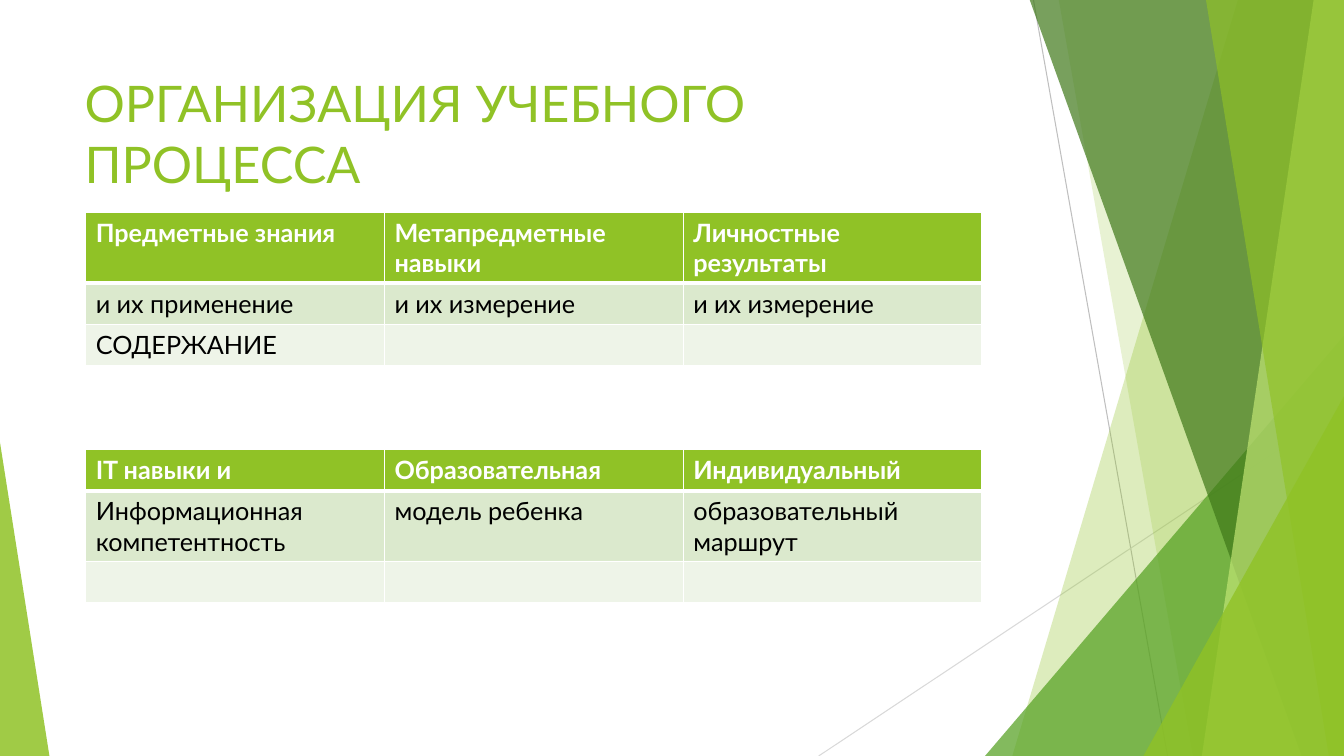
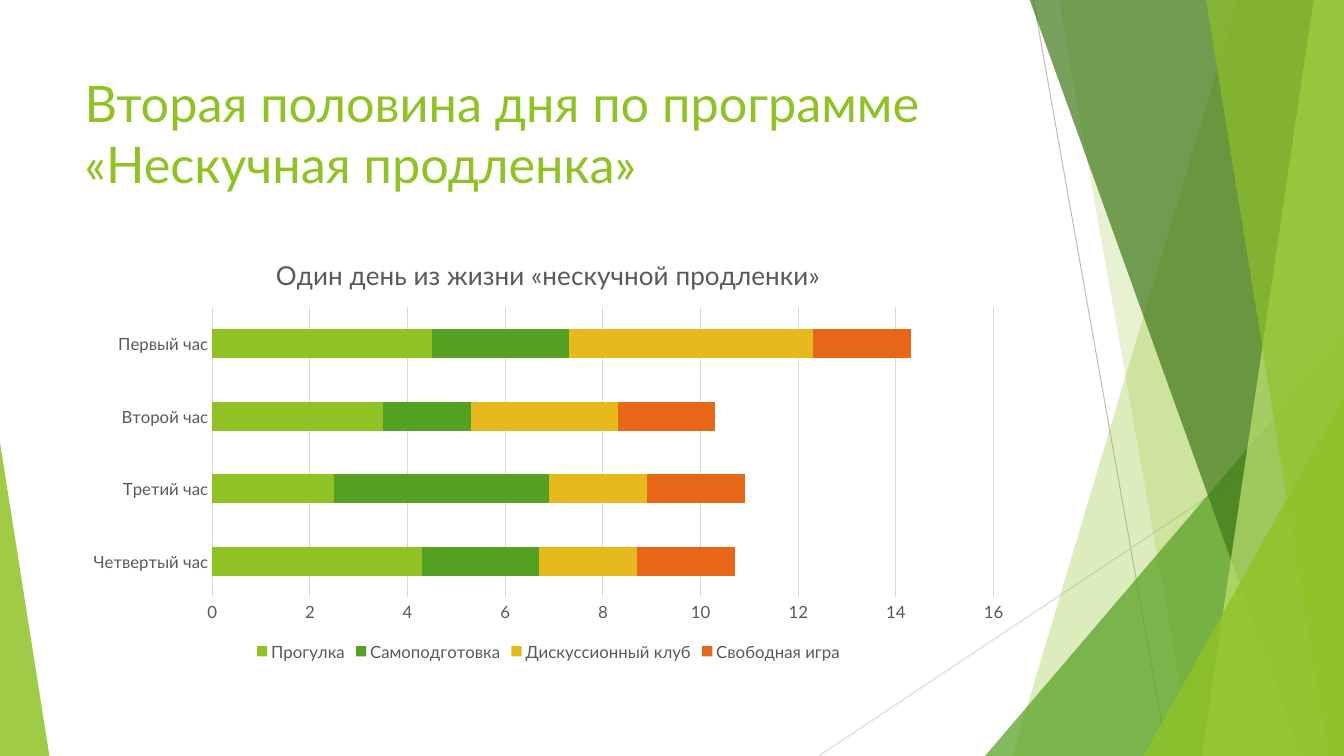
from lxml import etree
from pptx import Presentation
from pptx.chart.data import CategoryChartData
from pptx.dml.color import RGBColor
from pptx.enum.chart import XL_CHART_TYPE, XL_LEGEND_POSITION, XL_TICK_MARK
from pptx.enum.shapes import MSO_CONNECTOR, MSO_SHAPE
from pptx.enum.text import MSO_ANCHOR
from pptx.oxml.ns import qn
from pptx.util import Inches, Pt

STACKED = XL_CHART_TYPE.BAR_STACKED
BOTTOM = XL_LEGEND_POSITION.BOTTOM
NO_TICK = XL_TICK_MARK.NONE
STRAIGHT = MSO_CONNECTOR.STRAIGHT
TRIANGLE = MSO_SHAPE.RIGHT_TRIANGLE
ISOSCELES = MSO_SHAPE.ISOSCELES_TRIANGLE
TOP = MSO_ANCHOR.TOP

FONT = "Lato"
WIDTH, HEIGHT = 13.33, 7.5
C = {
    "lime": "90C226", "green": "54A021", "dark": "3F7819", "pale": "C0E474",
    "yellow": "E6B91E", "orange": "E76618", "white": "FFFFFF", "black": "000000",
    "row_odd": "DBE9CD", "row_even": "EEF4E8",
    "text": "595959", "line": "BFBFBF", "grid": "D9D9D9",
}


def rgb(name):
    return RGBColor.from_string(C[name])


class Deck:
    def __init__(self):
        self.prs = Presentation()
        self.prs.slide_width = Inches(WIDTH)
        self.prs.slide_height = Inches(HEIGHT)
        self.s = None

    def slide(self, *title_lines):
        self.s = self.prs.slides.add_slide(self.prs.slide_layouts[6])
        self.backdrop()
        self.title(title_lines)

    def font(self, font, size, color, bold=False):
        font.name = FONT
        font.size = Pt(size)
        font.bold = bold
        font.color.rgb = rgb(color)

    def paint(self, sp, color, alpha):
        sp.shadow.inherit = False
        sp.line.fill.background()
        sp.fill.solid()
        sp.fill.fore_color.rgb = rgb(color)
        clr = sp.fill._xPr.find(qn("a:solidFill"))[0]
        etree.SubElement(clr, qn("a:alpha")).set("val", str(alpha * 1000))

    def line(self, x1, y1, x2, y2, color):
        cn = self.s.shapes.add_connector(
            STRAIGHT, Inches(x1), Inches(y1), Inches(x2), Inches(y2))
        cn.line.color.rgb = rgb(color)
        cn.line.width = Pt(0.75)
        etree.SubElement(cn._element.spPr, qn("a:effectLst"))

    def shard(self, top_x, bottom_x, color, alpha):
        top, right, bottom = Inches(-0.01), Inches(WIDTH), Inches(HEIGHT)
        fb = self.s.shapes.build_freeform(Inches(top_x), top)
        fb.add_line_segments(
            [(right, top), (right, bottom), (Inches(bottom_x), bottom)])
        self.paint(fb.convert_to_shape(), color, alpha)

    def triangle(self, x, y, w, apex, color, alpha):
        sp = self.s.shapes.add_shape(
            ISOSCELES, Inches(x), Inches(y), Inches(w), Inches(HEIGHT - y))
        sp.adjustments[0] = apex
        self.paint(sp, color, alpha)

    def backdrop(self):
        self.line(10.25, 0, 11.58, HEIGHT, "line")
        self.line(WIDTH, 4.03, 8.12, HEIGHT, "grid")
        self.shard(12.28, 10.04, "lime", 30)
        self.shard(10.5, 11.83, "lime", 20)
        self.triangle(9.77, 3.33, 3.56, 1, "green", 72)
        self.shard(10.21, 12.91, "dark", 70)
        self.shard(13.03, 11.92, "pale", 70)
        self.shard(11.96, 13.18, "lime", 65)
        self.triangle(11.34, 3.93, 1.99, 1, "lime", 80)
        self.triangle(0, 4.39, 0.49, 0, "lime", 85)

    def title(self, lines):
        tf = self.s.shapes.add_textbox(
            Inches(0.74), Inches(0.67), Inches(9.4), Inches(1.44)).text_frame
        tf.word_wrap = True
        tf.vertical_anchor = TOP
        p = tf.paragraphs[0]
        for i, text in enumerate(lines):
            if i:
                p.add_line_break()
            r = p.add_run()
            r.text = text
            self.font(r.font, 36, "lime")

    def borders(self, cell, top, bottom):
        tcPr = cell._tc.get_or_add_tcPr()
        for side, width in (("L", 1), ("R", 1), ("T", top), ("B", bottom)):
            ln = etree.SubElement(tcPr, qn(f"a:ln{side}"), w=str(Pt(width)))
            fill = etree.SubElement(ln, qn("a:solidFill"))
            etree.SubElement(fill, qn("a:srgbClr"), val=C["white"])

    def table(self, y, rows):
        row_h, n = 0.41, len(rows[0])
        tbl = self.s.shapes.add_table(
            len(rows), n, Inches(0.85), Inches(y),
            Inches(8.89), Inches(row_h * len(rows))).table
        for i, row in enumerate(rows):
            header = i == 0
            fill = "lime" if header else "row_odd" if i % 2 else "row_even"
            for j, text in enumerate(row):
                cell = tbl.cell(i, j)
                self.borders(cell, 3 if i == 1 else 1, 3 if header else 1)
                cell.fill.solid()
                cell.fill.fore_color.rgb = rgb(fill)
                if text:
                    r = cell.text_frame.paragraphs[0].add_run()
                    r.text = text
                    self.font(r.font, 18, "white" if header else "black", header)

    def axis(self, axis):
        axis.major_tick_mark = axis.minor_tick_mark = NO_TICK
        self.font(axis.tick_labels.font, 12, "text")

    def chart(self, title, cats, series):
        data = CategoryChartData()
        data.categories = cats
        for name, _, vals in series:
            data.add_series(name, vals)
        chart = self.s.shapes.add_chart(
            STACKED, Inches(0.74), Inches(2.36), Inches(9.4), Inches(4.24), data).chart
        self.font(chart.font, 12, "text")
        chart.has_title = True
        r = chart.chart_title.text_frame.paragraphs[0].add_run()
        r.text = title
        self.font(r.font, 18.6, "text")
        chart.has_legend = True
        chart.legend.position = BOTTOM
        chart.legend.include_in_layout = False
        self.font(chart.legend.font, 12, "text")

        cat, val = chart.category_axis, chart.value_axis
        self.axis(cat)
        self.axis(val)
        cat.format.line.color.rgb = rgb("grid")
        cat.format.line.width = Pt(0.75)
        val.format.line.fill.background()
        val.minimum_scale, val.maximum_scale, val.major_unit = 0, 16, 2
        val.has_major_gridlines = True
        val.major_gridlines.format.line.color.rgb = rgb("grid")
        val.major_gridlines.format.line.width = Pt(0.75)

        plot = chart.plots[0]
        plot.gap_width = 150
        plot.overlap = 100
        plot.vary_by_categories = False
        for ser, (_, color, _) in zip(plot.series, series):
            ser.format.fill.solid()
            ser.format.fill.fore_color.rgb = rgb(color)


def main():
    d = Deck()
    d.slide("ОРГАНИЗАЦИЯ УЧЕБНОГО ПРОЦЕССА")
    d.table(2.11, [
        ("Предметные знания", "Метапредметные навыки", "Личностные результаты"),
        ("и их применение", "и их измерение", "и их измерение"),
        ("СОДЕРЖАНИЕ", "", ""),
    ])
    d.table(4.46, [
        ("IT навыки и", "Образовательная", "Индивидуальный"),
        ("Информационная компетентность", "модель ребенка", "образовательный маршрут"),
        ("", "", ""),
    ])

    d.slide("Вторая половина дня по программе", "«Нескучная продленка»")
    d.chart(
        "Один день из жизни «нескучной продленки»",
        ("Четвертый час", "Третий час", "Второй час", "Первый час"),
        [
            ("Прогулка", "lime", (4.3, 2.5, 3.5, 4.5)),
            ("Самоподготовка", "green", (2.4, 4.4, 1.8, 2.8)),
            ("Дискуссионный клуб", "yellow", (2, 2, 3, 5)),
            ("Свободная игра", "orange", (2, 2, 2, 2)),
        ],
    )
    d.prs.save("out.pptx")


if __name__ == "__main__":
    main()
